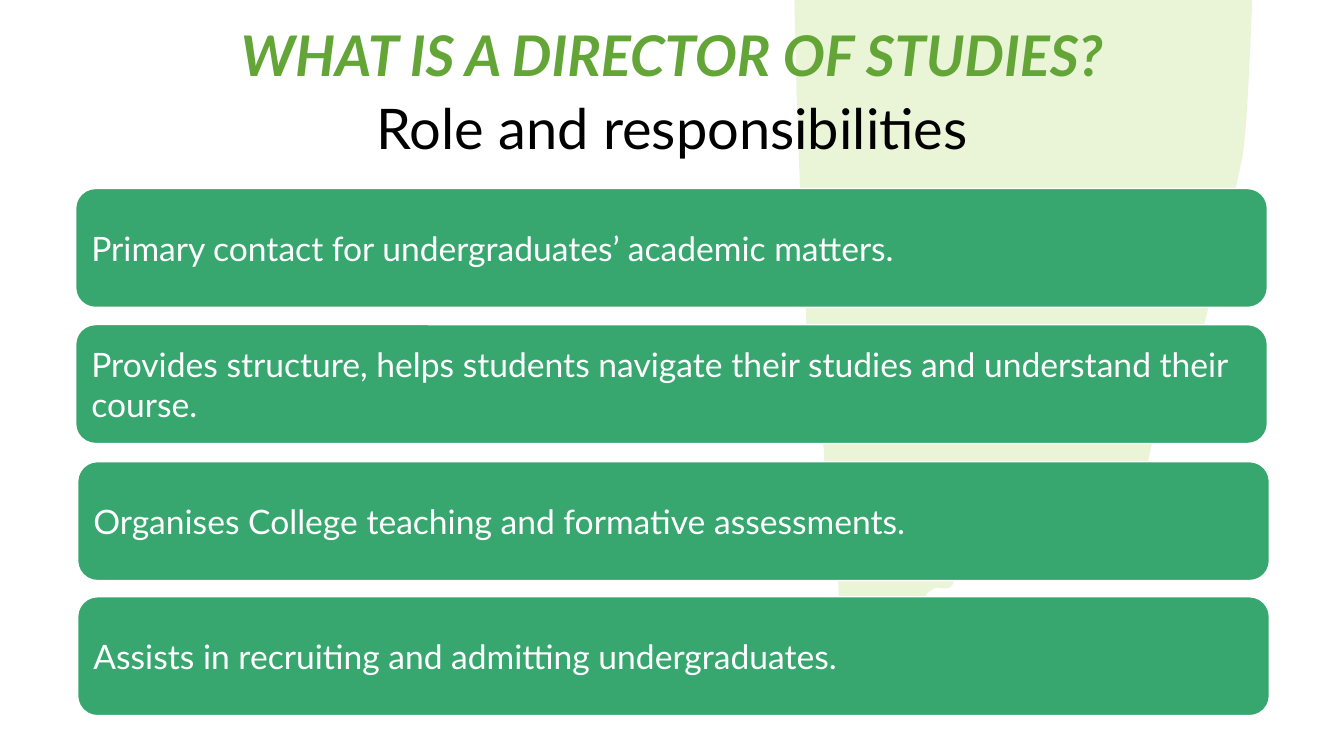
from dataclasses import dataclass

from lxml.etree import SubElement
from pptx import Presentation
from pptx.dml.color import RGBColor
from pptx.enum.shapes import MSO_SHAPE
from pptx.enum.text import MSO_ANCHOR, PP_ALIGN
from pptx.oxml.ns import qn
from pptx.util import Pt

EMU_PER_PX = 9144
SLIDE_WIDTH, SLIDE_HEIGHT = 1333, 750


@dataclass(frozen=True)
class Theme:
    font: str = "Lato"
    heading_size: int = 40
    body_size: int = 24
    heading: str = "63A537"
    subtitle: str = "000000"
    card: str = "37A76F"
    white: str = "FFFFFF"
    brush: str = "99CB38"
    brush_alpha: str = "20000"


THEME = Theme()

DUTIES = [
    (75, 187, "Primary contact for undergraduates’ academic matters."),
    (75, 322, "Provides structure, helps students navigate their studies and understand their course."),
    (77, 458, "Organises College teaching and formative assessments."),
    (77, 592, "Assists in recruiting and admitting undergraduates."),
]
CARD_WIDTH, CARD_HEIGHT = 1182, 118

BRUSH_START = (788, 0)
BRUSH_HEIGHT = 629
BRUSH_CURVES = [
    ((790, 130), (797, 258), (797, 258)),
    ((797, 258), (802, 384), (806, 409)),
    ((809, 435), (813, 419), (817, 444)),
    ((818, 461), (816, 478), (822, 494)),
    ((821, 518), (828, 534), (831, 558)),
    ((832, 577), (830, 596), (837, 614)),
    ((844, 628), (852, 638), (869, 624)),
    ((869, 607), (898, 609), (894, 592)),
    ((907, 595), (900, 608), (910, 613)),
    ((918, 604), (912, 586), (930, 583)),
    ((948, 587), (946, 576), (947, 566)),
    ((950, 543), (952, 529), (957, 507)),
    ((958, 501), (955, 488), (967, 490)),
    ((977, 491), (973, 501), (974, 507)),
    ((977, 541), (969, 539), (969, 573)),
    ((969, 575), (975, 576), (979, 561)),
    ((987, 533), (996, 510), (1001, 486)),
    ((1006, 491), (1011, 469), (1015, 474)),
    ((1016, 482), (1019, 490), (1025, 498)),
    ((1031, 521), (1025, 542), (1040, 562)),
    ((1040, 562), (1041, 556), (1049, 531)),
    ((1056, 511), (1065, 521), (1083, 470)),
    ((1089, 490), (1077, 515), (1106, 525)),
    ((1112, 510), (1108, 492), (1122, 482)),
    ((1126, 479), (1129, 475), (1131, 471)),
    ((1132, 473), (1132, 475), (1133, 477)),
    ((1136, 474), (1152, 399), (1153, 381)),
    ((1157, 394), (1160, 421), (1160, 421)),
    ((1160, 421), (1178, 415), (1231, 162)),
    ((1236, 142), (1239, 74), (1242, 0)),
]


def px(length):
    return length * EMU_PER_PX


def apply_format(target, values):
    for name, value in values.items():
        setattr(target, name, value)


def place(shape, left, top, width, height):
    box = {"left": left, "top": top, "width": width, "height": height}
    apply_format(shape, {name: px(length) for name, length in box.items()})


def write_text(shape, text, size, color, anchor, paragraph_format, **font_format):
    frame = shape.text_frame
    apply_format(frame, {"word_wrap": True, "vertical_anchor": anchor})
    paragraph = frame.paragraphs[0]
    apply_format(paragraph, paragraph_format)
    run = paragraph.add_run()
    run.text = text
    apply_format(run.font, {"name": THEME.font, "size": Pt(size), **font_format})
    run.font.color.rgb = RGBColor.from_string(color)


def paint(shape, color):
    shape.shadow.inherit = False
    shape.fill.solid()
    shape.fill.fore_color.rgb = RGBColor.from_string(color)


def bend_segments(shape, origin, curves):
    outline = shape.element.spPr.find(f".//{qn('a:path')}")
    for segment, curve in zip(outline.findall(qn("a:lnTo")), curves):
        segment.tag = qn("a:cubicBezTo")
        segment.clear()
        for x, y in curve:
            point = SubElement(segment, qn("a:pt"))
            point.set("x", str(x - origin[0]))
            point.set("y", str(y - origin[1]))
    outline.set("h", str(BRUSH_HEIGHT))
    shape.height = px(BRUSH_HEIGHT)


def add_brush(slide):
    builder = slide.shapes.build_freeform(*BRUSH_START, scale=EMU_PER_PX)
    builder.add_line_segments([curve[-1] for curve in BRUSH_CURVES], close=True)
    brush = builder.convert_to_shape()
    bend_segments(brush, BRUSH_START, BRUSH_CURVES)
    paint(brush, THEME.brush)
    brush.line.fill.background()
    color = brush.element.spPr.find(f".//{qn('a:srgbClr')}")
    SubElement(color, qn("a:alpha")).set("val", THEME.brush_alpha)


def add_heading(slide, text):
    heading = slide.shapes.add_textbox(0, 0, 0, 0)
    place(heading, 0, 15, SLIDE_WIDTH, 95)
    write_text(heading, text, THEME.heading_size, THEME.heading, MSO_ANCHOR.TOP,
               {"alignment": PP_ALIGN.CENTER}, bold=True, italic=True)


def add_card(slide, left, top, text):
    card = slide.shapes.add_shape(MSO_SHAPE.ROUNDED_RECTANGLE, 0, 0, 0, 0)
    place(card, left, top, CARD_WIDTH, CARD_HEIGHT)
    paint(card, THEME.card)
    card.line.color.rgb = RGBColor.from_string(THEME.white)
    card.line.width = Pt(1)
    write_text(card, text, THEME.body_size, THEME.white, MSO_ANCHOR.MIDDLE,
               {"alignment": PP_ALIGN.LEFT})


def set_title(slide, text):
    title = slide.shapes.title
    place(title, 0, 88, SLIDE_WIDTH, 85)
    write_text(title, text, THEME.heading_size, THEME.subtitle, MSO_ANCHOR.MIDDLE,
               {"alignment": PP_ALIGN.CENTER, "line_spacing": 0.9})
    title.element.getparent().append(title.element)


def main():
    presentation = Presentation()
    apply_format(presentation, {"slide_width": px(SLIDE_WIDTH), "slide_height": px(SLIDE_HEIGHT)})
    slide = presentation.slides.add_slide(presentation.slide_layouts.get_by_name("Title Only"))
    add_brush(slide)
    add_heading(slide, "WHAT IS A DIRECTOR OF STUDIES?")
    for left, top, duty in DUTIES:
        add_card(slide, left, top, duty)
    set_title(slide, "Role and responsibilities")
    presentation.save("out.pptx")


if __name__ == "__main__":
    main()
